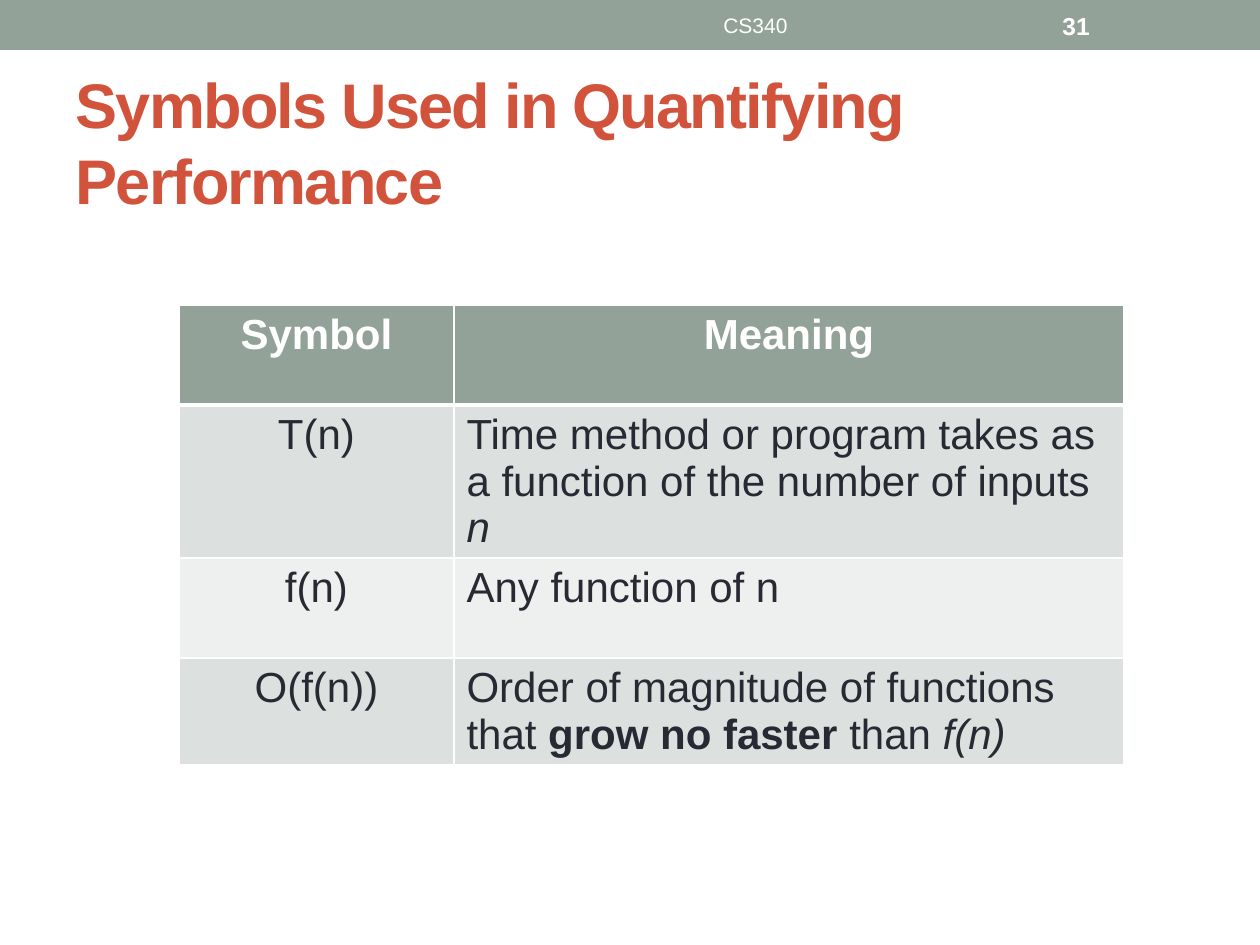
from lxml import etree
from pptx import Presentation
from pptx.dml.color import RGBColor
from pptx.enum.shapes import MSO_SHAPE
from pptx.enum.text import MSO_ANCHOR, MSO_AUTO_SIZE, PP_ALIGN
from pptx.oxml.ns import qn
from pptx.util import Pt

RECT = MSO_SHAPE.RECTANGLE
MIDDLE = MSO_ANCHOR.MIDDLE
NO_FIT = MSO_AUTO_SIZE.NONE
LEFT, CENTER = PP_ALIGN.LEFT, PP_ALIGN.CENTER

EMU_PER_PX = 914400 / 126
COLORS = {
    "sage": "93A299",
    "band_dark": "DCE0DE",
    "band_light": "EEF0EF",
    "title": "D2533C",
    "ink": "292934",
    "white": "FFFFFF",
}


def px(length):
    return round(length * EMU_PER_PX)


def rgb(name):
    return RGBColor.from_string(COLORS[name])


def write(frame, text, size=24, color="ink", bold=False, align=LEFT,
          spacing=None, font="Arial"):
    """Fill a frame with a string, or with (text, style) runs; style is '', 'b' or 'i'."""
    paragraph = frame.paragraphs[0]
    paragraph.alignment = align
    runs = [(text, "")] if isinstance(text, str) else text
    for words, style in runs:
        run = paragraph.add_run()
        run.text = words
        run.font.name = font
        run.font.size = Pt(size)
        run.font.bold = bold or style == "b"
        run.font.italic = style == "i"
        run.font.color.rgb = rgb(color)
        if spacing is not None:
            run.font._element.set("spc", str(spacing * 100))


class SlideBuilder:
    def __init__(self, slide):
        self.slide = slide

    def bar(self, left, top, width, height, color):
        bar = self.slide.shapes.add_shape(
            RECT, px(left), px(top), px(width), px(height))
        bar.shadow.inherit = False
        bar.fill.solid()
        bar.fill.fore_color.rgb = rgb(color)
        bar.line.fill.background()

    def title(self, left, top, width, height, text, **style):
        title = self.slide.shapes.title
        title.left, title.top = px(left), px(top)
        title.width, title.height = px(width), px(height)
        self.frame(title, text, **style)

    def label(self, left, top, width, height, text, **style):
        label = self.slide.shapes.add_textbox(
            px(left), px(top), px(width), px(height))
        self.frame(label, text, **style)

    def frame(self, holder, text, **style):
        frame = holder.text_frame
        frame.word_wrap = True
        frame.auto_size = NO_FIT
        frame.vertical_anchor = MIDDLE
        write(frame, text, **style)

    def table(self, left, top, widths, heights, rows):
        table = self.slide.shapes.add_table(
            len(rows), len(widths), px(left), px(top),
            px(sum(widths)), px(sum(heights))).table
        for column, width in zip(table.columns, widths):
            column.width = px(width)
        for r, (height, row) in enumerate(zip(heights, rows)):
            table.rows[r].height = px(height)
            header = r == 0
            fill = "sage" if header else ("band_dark" if r % 2 else "band_light")
            for c, text in enumerate(row):
                cell = table.cell(r, c)
                cell.fill.solid()
                cell.fill.fore_color.rgb = rgb(fill)
                self.borders(cell, top=3 if r == 1 else 1, bottom=3 if header else 1)
                write(cell.text_frame, text, bold=header,
                      color="white" if header else "ink",
                      align=CENTER if header or c == 0 else LEFT)

    def borders(self, cell, top, bottom):
        properties = cell._tc.get_or_add_tcPr()
        sides = (("a:lnL", 1), ("a:lnR", 1), ("a:lnT", top), ("a:lnB", bottom))
        for position, (side, points) in enumerate(sides):
            line = etree.Element(qn(side), w=str(Pt(points)))
            solid = etree.SubElement(line, qn("a:solidFill"))
            etree.SubElement(solid, qn("a:srgbClr"), val=COLORS["white"])
            properties.insert(position, line)


def main():
    deck = Presentation()
    deck.slide_width, deck.slide_height = px(1260), px(945)
    title_only = deck.slide_layouts[5]
    builder = SlideBuilder(deck.slides.add_slide(title_only))

    # Header band with course and page number
    builder.bar(0, 0, 1260, 50, "sage")
    builder.label(472, 3, 567, 45, "CS340", size=12, color="white", align=CENTER)
    builder.label(1050, 3, 147, 45, "31", size=14, color="white", bold=True)

    # Title
    builder.title(63, 73, 1134, 136, "Symbols Used in Quantifying Performance",
                  size=36, color="title", bold=True, spacing=-1)

    # Symbols and their meanings
    symbols = [
        ("Symbol", "Meaning"),
        ("T(n)", [("Time method or program takes as a function of "
                   "the number of inputs ", ""), ("n", "i")]),
        ("f(n)", "Any function of n"),
        ("O(f(n))", [("Order of magnitude of functions that ", ""),
                     ("grow no faster ", "b"), ("than ", ""), ("f(n)", "i")]),
    ]
    builder.table(179, 305, widths=[275, 670], heights=[100, 120, 100, 100],
                  rows=symbols)

    deck.save("out.pptx")


if __name__ == "__main__":
    main()
